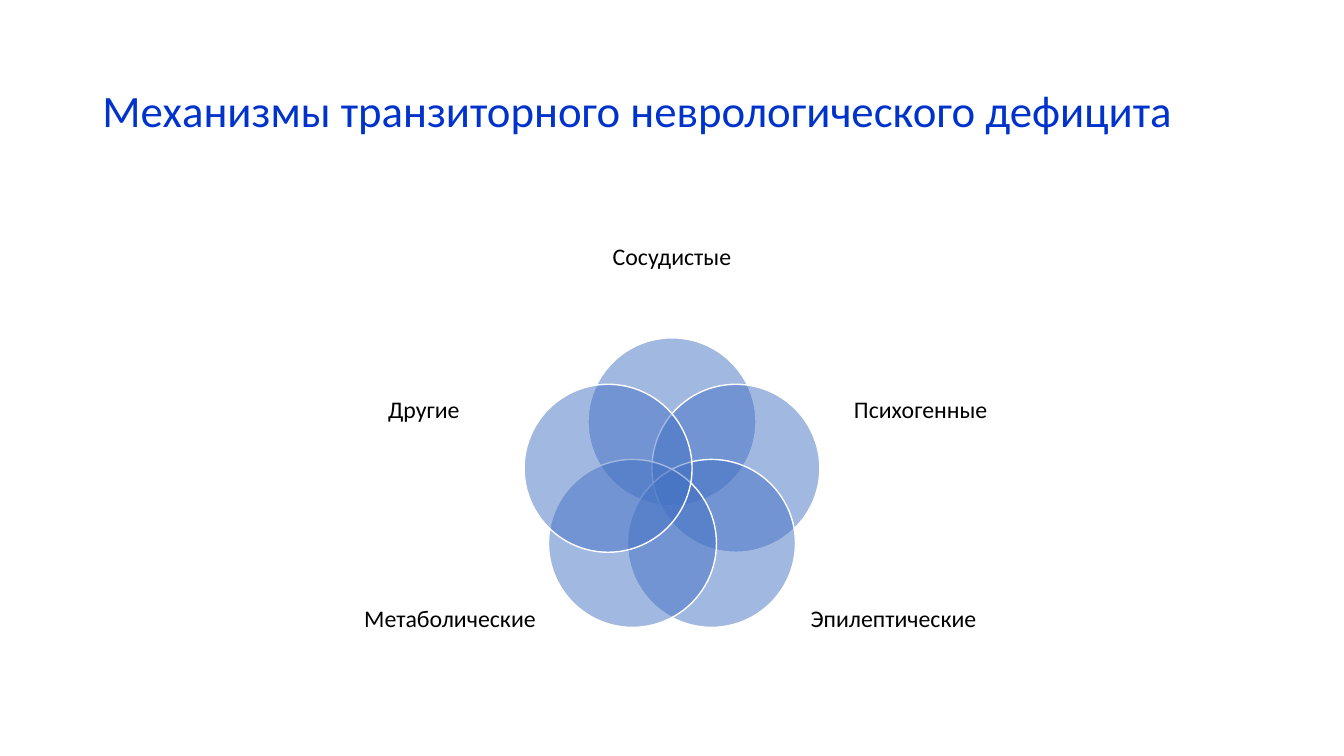
from dataclasses import dataclass
from math import cos, pi, sin

from lxml.etree import SubElement
from pptx import Presentation
from pptx.dml.color import RGBColor
from pptx.enum.shapes import MSO_SHAPE as Kind
from pptx.enum.text import MSO_ANCHOR as Anchor, PP_ALIGN as Align
from pptx.oxml.ns import qn
from pptx.shapes.shapetree import GroupShapes as Group
from pptx.util import Pt

MID_X, MID_Y = 480, 349.3
ORBIT = 48
SIZE = 120


@dataclass
class Label:
    text: str
    left: float
    top: float
    width: float = 124.6
    height: float = 87.1


LABELS = [
    Label("Сосудистые", 410.5, 144, 139, 80.6),
    Label("Психогенные", 595.4, 249.8),
    Label("Эпилептические", 576, 398.9),
    Label("Метаболические", 259.2, 398.9),
    Label("Другие", 240.5, 249.8),
]


def color(code: str) -> RGBColor:
    return RGBColor.from_string(code)


def add_text(shapes, label: Label, size: float, code: str, align: Align):
    box = shapes.add_textbox(
        Pt(label.left), Pt(label.top), Pt(label.width), Pt(label.height)
    )
    frame = box.text_frame
    frame.word_wrap = True
    frame.vertical_anchor = Anchor.MIDDLE
    line = frame.paragraphs[0]
    line.text = label.text
    line.alignment = align
    line.line_spacing = 0.9
    line.font.name = "Calibri"
    line.font.size = Pt(size)
    line.font.color.rgb = color(code)
    return frame


def add_circle(shapes: Group, turn: float) -> None:
    left = MID_X + ORBIT * sin(turn) - SIZE / 2
    top = MID_Y - ORBIT * cos(turn) - SIZE / 2
    disc = shapes.add_shape(Kind.OVAL, Pt(left), Pt(top), Pt(SIZE), Pt(SIZE))
    disc.shadow.inherit = False
    disc.fill.solid()
    disc.fill.fore_color.rgb = color("4472C4")
    disc.line.color.rgb = color("FFFFFF")
    disc.line.width = Pt(1)
    tint = disc.fill._xPr.find(qn("a:solidFill"))[0]
    SubElement(tint, qn("a:alpha"), val="50000")


def add_label(shapes: Group, label: Label) -> None:
    frame = add_text(shapes, label, 17, "000000", Align.CENTER)
    frame.margin_left = frame.margin_right = 0
    frame.margin_top = frame.margin_bottom = 0


def main() -> None:
    deck = Presentation()
    deck.slide_width, deck.slide_height = Pt(960), Pt(540)
    slide = deck.slides.add_slide(deck.slide_layouts[6])
    title = Label("Механизмы транзиторного неврологического дефицита", 66, 28.8, 828, 104.4)
    add_text(slide.shapes, title, 32, "0033CC", Align.LEFT)
    venn = slide.shapes.add_group_shape().shapes
    for step, label in enumerate(LABELS):
        add_circle(venn, 2 * pi * step / len(LABELS))
        add_label(venn, label)
    deck.save("out.pptx")


if __name__ == "__main__":
    main()
